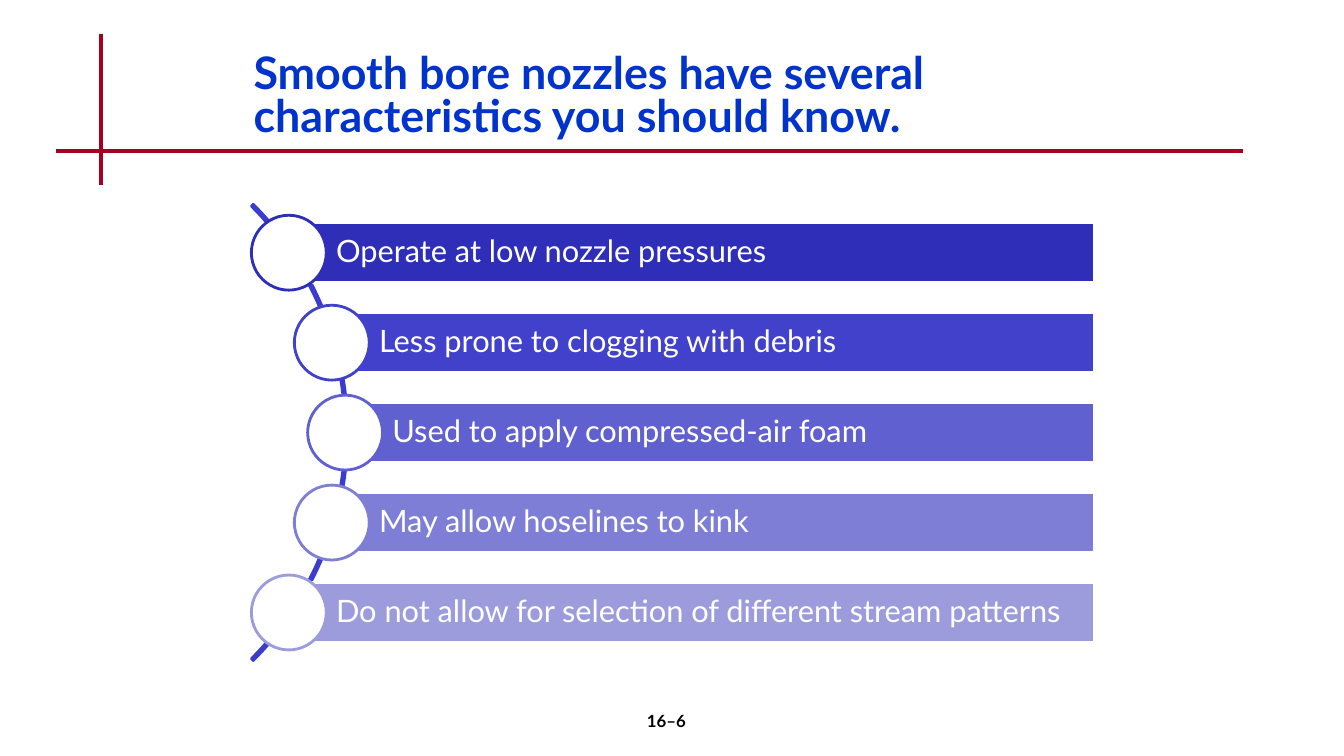
from pptx import Presentation
from pptx.dml.color import RGBColor
from pptx.enum.shapes import MSO_CONNECTOR, MSO_SHAPE
from pptx.enum.text import MSO_ANCHOR, PP_ALIGN
from pptx.oxml.ns import qn
from pptx.util import Pt
from lxml import etree

LINE = MSO_CONNECTOR.STRAIGHT
ARC, RECT, OVAL = MSO_SHAPE.BLOCK_ARC, MSO_SHAPE.RECTANGLE, MSO_SHAPE.OVAL
MIDDLE, TOP = MSO_ANCHOR.MIDDLE, MSO_ANCHOR.TOP
LEFT, CENTER = PP_ALIGN.LEFT, PP_ALIGN.CENTER

WHITE = RGBColor(0xFF, 0xFF, 0xFF)
BLACK = RGBColor(0x00, 0x00, 0x00)
RED = RGBColor(0xA5, 0x00, 0x21)
BLUE = RGBColor(0x00, 0x33, 0xCC)
CURVE = RGBColor(0x3B, 0x3B, 0xCD)
SHADES = [
    RGBColor(0x2E, 0x2E, 0xB9),
    RGBColor(0x41, 0x41, 0xCB),
    RGBColor(0x60, 0x60, 0xD0),
    RGBColor(0x7E, 0x7E, 0xD6),
    RGBColor(0x9C, 0x9C, 0xDD),
]
TRAITS = [
    "Operate at low nozzle pressures",
    "Less prone to clogging with debris",
    "Used to apply compressed-air foam",
    "May allow hoselines to kink",
    "Do not allow for selection of different stream patterns",
]

deck = Presentation()
deck.slide_width, deck.slide_height = Pt(960), Pt(540)
slide = deck.slides.add_slide(deck.slide_layouts[6])
shapes = slide.shapes


def add_form(kind, x, y, w, h, edge, fill=None):
    form = shapes.add_shape(kind, Pt(x), Pt(y), Pt(w), Pt(h))
    form.shadow.inherit = False
    if fill is None:
        form.fill.background()
    else:
        form.fill.solid()
        form.fill.fore_color.rgb = fill
    form.line.color.rgb = edge
    form.line.width = Pt(2)
    return form


def set_text(form, text, size, color, bold, align, anchor, space):
    frame = form.text_frame
    frame.word_wrap = True
    frame.vertical_anchor = anchor
    frame.text = text
    para = frame.paragraphs[0]
    para.alignment = align
    para.line_spacing = space
    font = para.runs[0].font
    font.name, font.size, font.bold = "Lato", Pt(size), bold
    font.color.rgb = color


# Red cross lines
for x1, y1, x2, y2 in [(72, 24, 72, 132), (40, 108, 888, 108)]:
    rule = shapes.add_connector(LINE, Pt(x1), Pt(y1), Pt(x2), Pt(y2))
    rule.line.color.rgb = RED
    rule.line.width = Pt(3)
    etree.SubElement(rule._element.spPr, qn("a:effectLst"))

# Title and page number
title = shapes.add_textbox(Pt(174), Pt(36), Pt(599), Pt(72))
set_text(title, "Smooth bore nozzles have several characteristics you should know.",
         32, BLUE, True, LEFT, TOP, 0.8)
page = shapes.add_textbox(Pt(376), Pt(504), Pt(200), Pt(36))
set_text(page, "16–6", 12, BLACK, True, CENTER, TOP, 1.0)

# Arc behind the list
arc = add_form(ARC, -212.4, 78.5, 460.8, 460.8, CURVE)
for i, value in enumerate([189, 27, 0.004]):
    arc.adjustments[i] = value

# Bars, each starting at the centre of its circle
FIRST, STEP = 180.5, 64.25
BAR, DISC, RIGHT = 42.5, 53.5, 781.5
STARTS = [206.3, 237, 246.5, 237, 206.3]
for i, (text, shade, x) in enumerate(zip(TRAITS, SHADES, STARTS)):
    y = FIRST + i * STEP
    bar = add_form(RECT, x, y - BAR / 2, RIGHT - x, BAR, WHITE, shade)
    frame = bar.text_frame
    frame.margin_left = Pt(33.8)
    frame.margin_right = frame.margin_top = frame.margin_bottom = Pt(4.3)
    set_text(bar, text, 22, WHITE, False, LEFT, MIDDLE, 0.9)
    add_form(OVAL, x - DISC / 2, y - DISC / 2, DISC, DISC, shade, WHITE)

deck.save("out.pptx")
